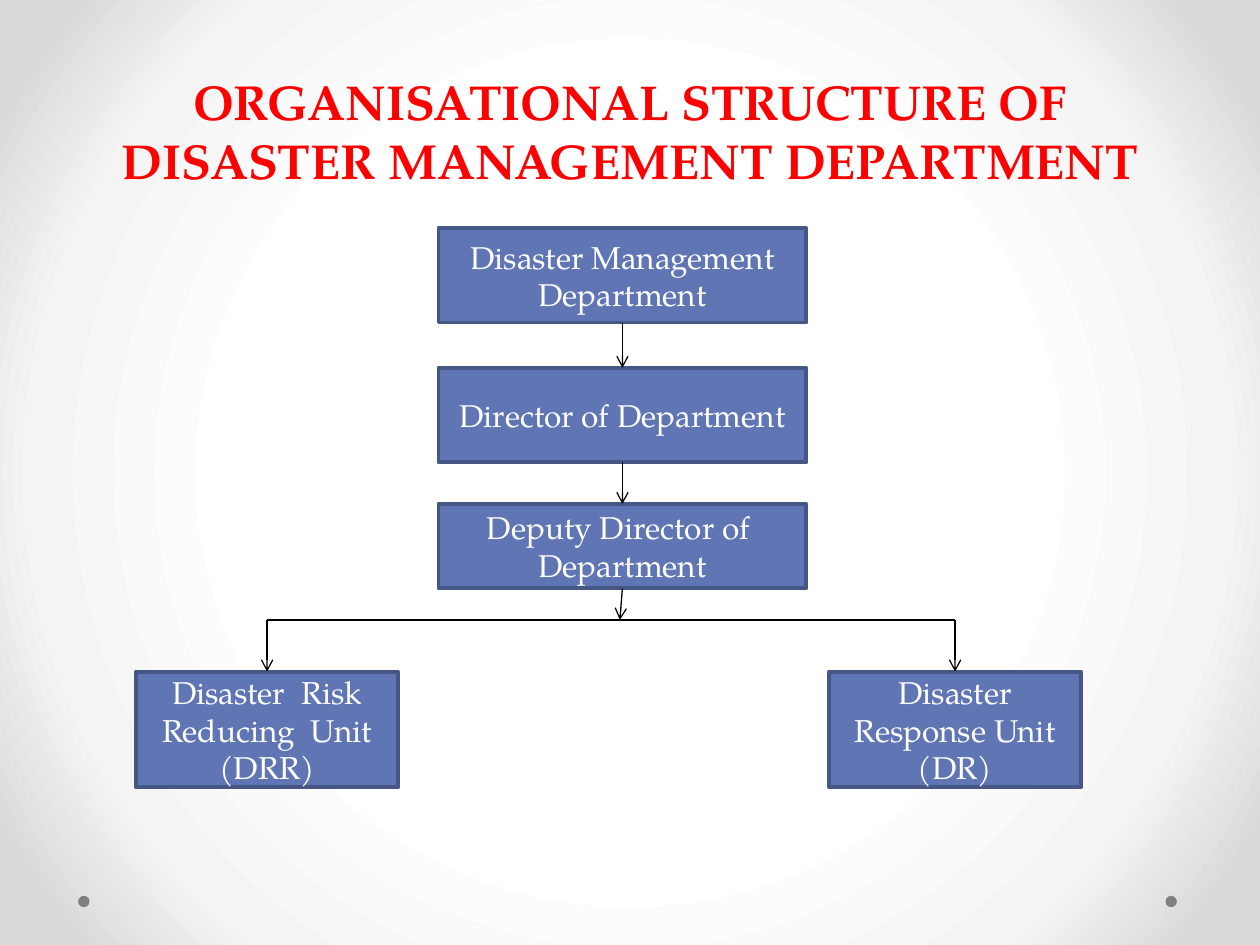
import pptx
import pptx.dml.color
import pptx.enum.shapes
import pptx.enum.text
import pptx.oxml
import pptx.oxml.ns
import pptx.util

Inches, Pt = pptx.util.Inches, pptx.util.Pt
RGBColor = pptx.dml.color.RGBColor
MSO_SHAPE = pptx.enum.shapes.MSO_SHAPE
MSO_CONNECTOR = pptx.enum.shapes.MSO_CONNECTOR
MSO_ANCHOR = pptx.enum.text.MSO_ANCHOR
PP_ALIGN = pptx.enum.text.PP_ALIGN
qn = pptx.oxml.ns.qn

FONT = "TeX Gyre Pagella"
RED = RGBColor(0xFF, 0x00, 0x00)
WHITE = RGBColor(0xFF, 0xFF, 0xFF)
BLACK = RGBColor(0x00, 0x00, 0x00)
GREY = RGBColor(0x80, 0x80, 0x80)
BOX_FILL = RGBColor(0x60, 0x76, 0xB4)
BOX_LINE = RGBColor(0x47, 0x57, 0x85)
BACKGROUND_STOPS = [
    (50, RGBColor(0xFF, 0xFF, 0xFF)),
    (76, RGBColor(0xF4, 0xF4, 0xF4)),
    (92, RGBColor(0xDA, 0xDA, 0xDA)),
]

TITLE = "ORGANISATIONAL STRUCTURE OF DISASTER MANAGEMENT DEPARTMENT"
CHAIN_LEFT, CHAIN_WIDTH = 3.48, 2.92
CHAIN = [  # text, top, height
    ("Disaster Management Department", 1.81, 0.75),
    ("Director of Department", 2.92, 0.75),
    ("Deputy Director of  Department", 4.0, 0.67),
]
UNIT_TOP, UNIT_HEIGHT = 5.33, 0.92
UNITS = [  # text, left, width
    ("Disaster  Risk Reducing  Unit (DRR)", 1.08, 2.08),
    ("Disaster Response Unit (DR)", 6.58, 2.0),
]
BUS_Y, BUS_ENTRY_X = 4.92, 4.92
DOT_LEFTS, DOT_TOP, DOT_SIZE = (0.62, 9.25), 7.11, 0.09
TOP, BOTTOM = 0, 2  # connection sites of a rectangle


def set_background(s):
    """Radial gradient spreading from the slide centre."""
    s.background.fill.gradient()
    grad = s.element.find(".//" + qn("a:gradFill"))
    stops = "".join(f'<a:gs pos="{pos * 1000}"><a:srgbClr val="{color}"/></a:gs>'
                    for pos, color in BACKGROUND_STOPS)
    grad.getparent().replace(grad, pptx.oxml.parse_xml(
        f'<a:gradFill {pptx.oxml.ns.nsdecls("a")} rotWithShape="1">'
        f'<a:gsLst>{stops}</a:gsLst><a:path path="circle">'
        '<a:fillToRect l="50000" t="50000" r="50000" b="50000"/>'
        '</a:path></a:gradFill>'))


def set_text(sp, text, size, color, anchor, bold=False):
    tf = sp.text_frame
    tf.word_wrap = True
    tf.vertical_anchor = anchor
    tf.text = text
    p = tf.paragraphs[0]
    p.alignment = PP_ALIGN.CENTER
    font = p.runs[0].font
    font.name, font.size, font.bold = FONT, Pt(size), bold
    font.color.rgb = color


def add_plain_shape(s, kind, left, top, width, height, fill):
    sp = s.shapes.add_shape(kind, Inches(left), Inches(top), Inches(width), Inches(height))
    sp.shadow.inherit = False
    sp.fill.solid()
    sp.fill.fore_color.rgb = fill
    sp.line.fill.background()
    return sp


def add_box(s, text, left, top, width, height):
    sp = add_plain_shape(s, MSO_SHAPE.RECTANGLE, left, top, width, height, BOX_FILL)
    sp.line.color.rgb = BOX_LINE
    sp.line.width = Pt(2.25)
    set_text(sp, text, 18, WHITE, MSO_ANCHOR.MIDDLE)
    return sp


def add_line(s, start, end, above=None, below=None, arrow=True):
    """Line between two points, joined to the boxes above and below if given."""
    line = s.shapes.add_connector(MSO_CONNECTOR.STRAIGHT, *map(Inches, start + end))
    line.line.color.rgb = BLACK
    line.line.width = Pt(0.75)
    if arrow:
        ln = line.line._get_or_add_ln()
        ln.append(ln.makeelement(qn("a:tailEnd"), {"type": "arrow"}))
    sp_pr = line._element.spPr
    sp_pr.append(sp_pr.makeelement(qn("a:effectLst"), {}))
    if above is not None:
        line.begin_connect(above, BOTTOM)
    if below is not None:
        line.end_connect(below, TOP)


def main():
    prs = pptx.Presentation()
    prs.slide_width, prs.slide_height = Inches(10), Inches(7.5)
    s = prs.slides.add_slide(prs.slide_layouts[6])
    set_background(s)

    for left in DOT_LEFTS:
        add_plain_shape(s, MSO_SHAPE.OVAL, left, DOT_TOP, DOT_SIZE, DOT_SIZE, GREY)

    title = s.shapes.add_textbox(Inches(0.5), Inches(0.25), Inches(9), Inches(1.75))
    set_text(title, TITLE, 28, RED, MSO_ANCHOR.BOTTOM, bold=True)
    title.text_frame.margin_bottom = Inches(0.5)

    chain = [add_box(s, text, CHAIN_LEFT, top, CHAIN_WIDTH, height)
             for text, top, height in CHAIN]
    units = [add_box(s, text, left, UNIT_TOP, width, UNIT_HEIGHT)
             for text, left, width in UNITS]

    chain_x = CHAIN_LEFT + CHAIN_WIDTH / 2
    bottoms = [top + height for _, top, height in CHAIN]
    for i in range(len(chain) - 1):
        add_line(s, (chain_x, bottoms[i]), (chain_x, CHAIN[i + 1][1]),
                 above=chain[i], below=chain[i + 1])
    add_line(s, (chain_x, bottoms[-1]), (BUS_ENTRY_X, BUS_Y), above=chain[-1])

    unit_xs = [left + width / 2 for _, left, width in UNITS]
    add_line(s, (unit_xs[0], BUS_Y), (unit_xs[-1], BUS_Y), arrow=False)
    for x, unit in zip(unit_xs, units):
        add_line(s, (x, BUS_Y), (x, UNIT_TOP), below=unit)

    prs.save("out.pptx")


if __name__ == "__main__":
    main()
